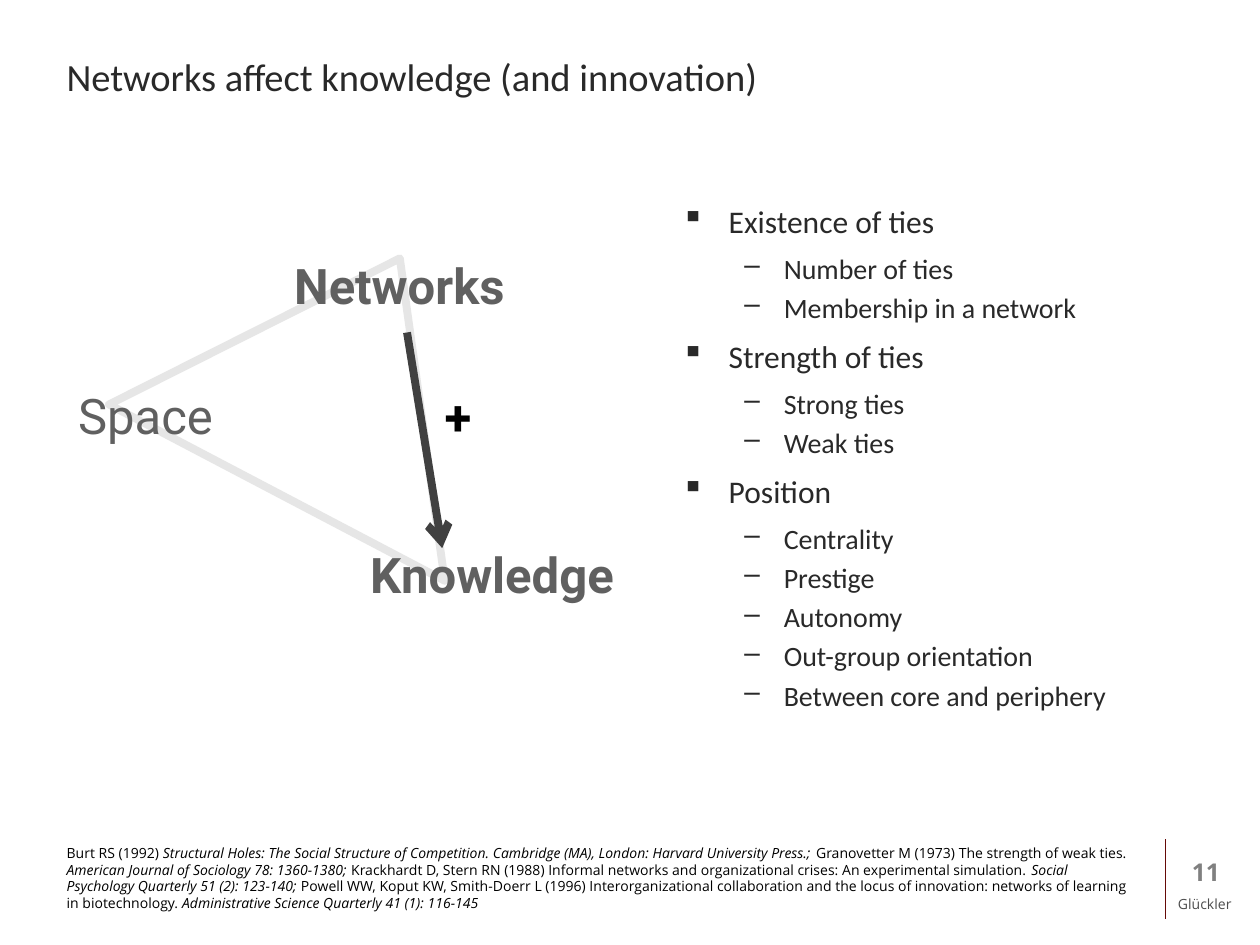
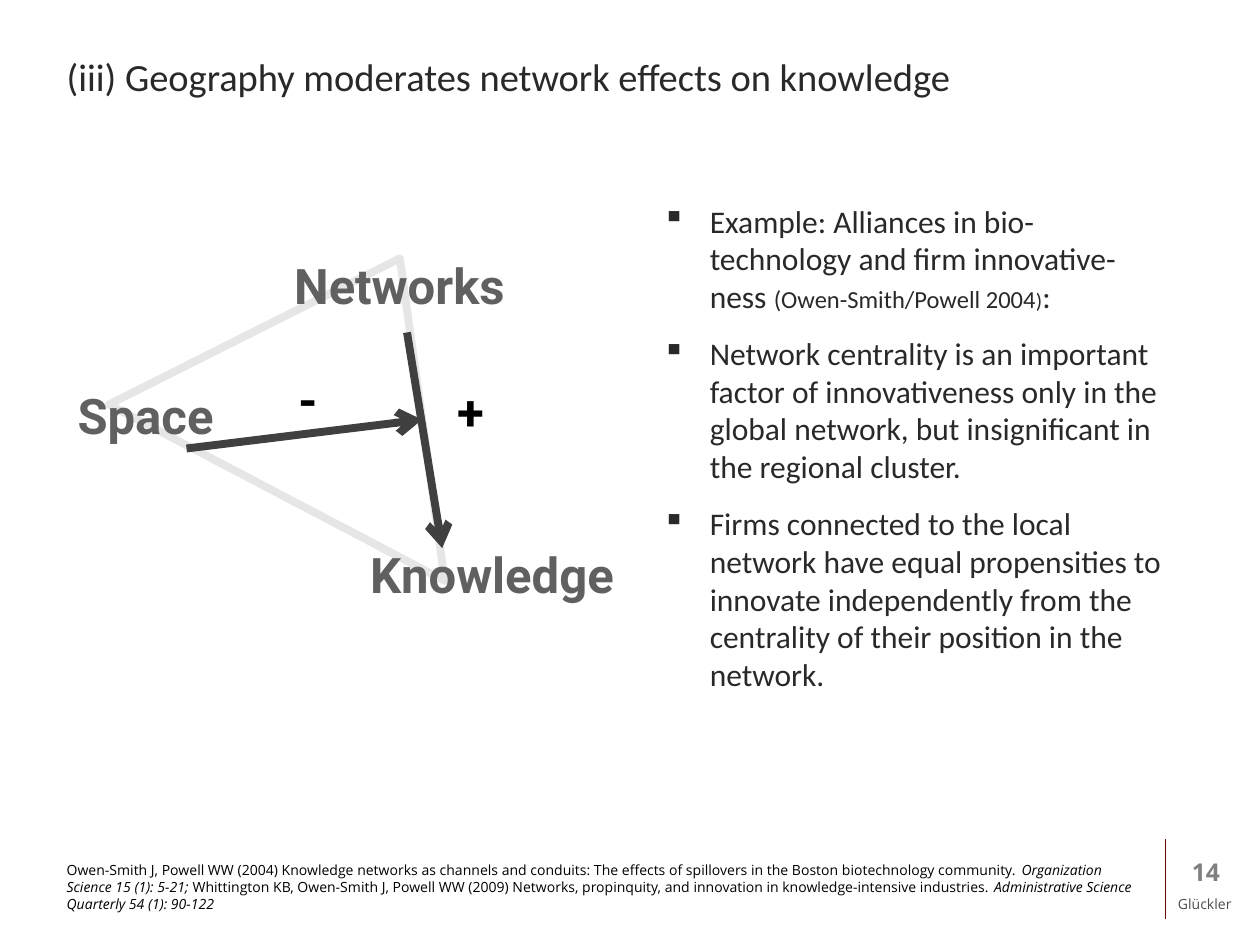
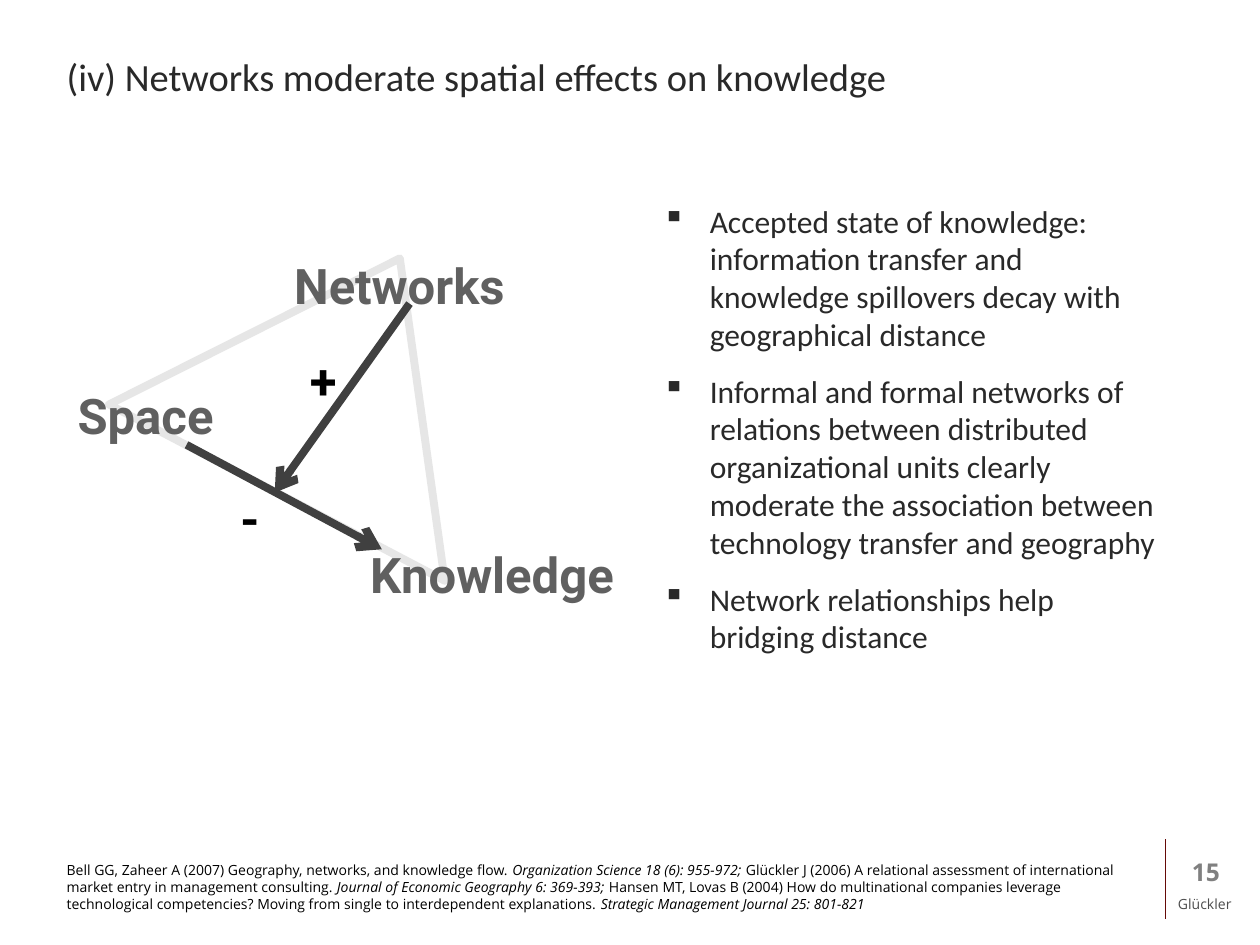
"""Build three slides on how networks, space and knowledge affect each other."""
from pptx import Presentation
from pptx.dml.color import RGBColor
from pptx.enum.shapes import MSO_CONNECTOR as Connector, MSO_SHAPE as Shape
from pptx.enum.text import MSO_ANCHOR as Anchor, PP_ALIGN as Align
from pptx.oxml.ns import qn
from pptx.util import Pt
from lxml.etree import SubElement

INK, BLACK, WHITE = "292929", "000000", "FFFFFF"
GREY, PAGE_GREY, AUTHOR_GREY = "606060", "808080", "4D4D4D"
TRIANGLE_GREY, ARROW_GREY, RULE_RED = "E6E6E6", "404040", "650907"
TITLE_FONT, SMALL_FONT, DIAGRAM_FONT = "Calibri", "Open Sans", "Roboto"

MARGIN = 31
RULE_X = 666
FOOTER_TOP, FOOTER_BOTTOM = 479.5, 525
BODY_RIGHT = 671.8
LEVELS = [
    {"bullet": "▪", "size": 18, "left": 27, "hang": 27, "before": 0.4, "after": 0.2},
    {"bullet": "–", "size": 16, "left": 58.5, "hang": 22.5, "before": 0.2, "after": 0},
]
LABELS = {
    "Knowledge": (174.2, 307.4, 213.8, 41.8),
    "Space": (13.7, 216.7, 139, 41.8),
    "Networks": (128.9, 142.6, 198.7, 41.8),
}
NETWORKS_TO_KNOWLEDGE = (232.6, 190, 252.7, 313.2)

SLIDES = [
    {
        "title": "Networks affect knowledge (and innovation)",
        "page": "11",
        "body_left": 382.3,
        "body": [
            (0, ["Existence of ties"]),
            (1, ["Number of ties"]),
            (1, ["Membership in a network"]),
            (0, ["Strength of ties"]),
            (1, ["Strong ties"]),
            (1, ["Weak ties"]),
            (0, ["Position"]),
            (1, ["Centrality"]),
            (1, ["Prestige"]),
            (1, ["Autonomy"]),
            (1, ["Out-group orientation"]),
            (1, ["Between core and periphery"]),
        ],
        "reference_lines": 4,
        "references": [
            "Burt RS (1992) ",
            "Structural Holes: The Social Structure of Competition. Cambridge (MA), "
            "London: Harvard University Press.; ",
            "Granovetter M (1973) The strength of weak ties. ",
            "American Journal of Sociology 78: 1360-1380; ",
            "Krackhardt D, Stern RN (1988) Informal networks and organizational crises: "
            "An experimental simulation. ",
            "Social Psychology Quarterly 51 (2): 123-140; ",
            "Powell WW, Koput KW, Smith-Doerr L (1996) Interorganizational collaboration "
            "and the locus of innovation: networks of learning in biotechnology. ",
            "Administrative Science Quarterly 41 (1): 116-145",
        ],
        "light_labels": ["Space"],
        "arrows": [NETWORKS_TO_KNOWLEDGE],
        "signs": [("+", 247, 217.4)],
    },
    {
        "title": "(iii) Geography moderates network effects on knowledge",
        "page": "14",
        "body_left": 371.5,
        "body": [
            (0, ["Example: Alliances in bio-technology and firm innovative-ness ",
                 ("(Owen-Smith/Powell 2004", 14), (")", 12), ":"]),
            (0, ["Network centrality is an important factor of innovativeness only in the "
                 "global network, but insignificant in the regional cluster."]),
            (0, ["Firms connected to the local network have equal propensities to innovate "
                 "independently from the centrality of their position in the network."]),
        ],
        "reference_lines": 3,
        "references": [
            "Owen-Smith J, Powell WW (2004) Knowledge networks as channels and conduits: "
            "The effects of spillovers in the Boston biotechnology community. ",
            "Organization Science 15 (1): 5-21; ",
            "Whittington KB, Owen-Smith J, Powell WW (2009) Networks, propinquity, and "
            "innovation in knowledge-intensive industries. ",
            "Administrative Science Quarterly 54 (1): 90-122",
        ],
        "light_labels": [],
        "arrows": [(106.6, 256.3, 241.2, 239.8), NETWORKS_TO_KNOWLEDGE],
        "signs": [("+", 254.2, 214.6), ("-", 163.4, 207.4)],
    },
    {
        "title": "(iv) Networks moderate spatial effects on knowledge",
        "page": "15",
        "body_left": 371.5,
        "body": [
            (0, ["Accepted state of knowledge: information transfer and knowledge "
                 "spillovers decay with geographical distance"]),
            (0, ["Informal and formal networks of relations between distributed "
                 "organizational units clearly moderate the association between "
                 "technology transfer and geography"]),
            (0, ["Network relationships help bridging distance"]),
        ],
        "reference_lines": 3,
        "references": [
            "Bell GG, Zaheer A (2007) Geography, networks, and knowledge flow. ",
            "Organization Science 18 (6): 955-972; ",
            "Glückler J (2006) A relational assessment of international market entry in "
            "management consulting. ",
            "Journal of Economic Geography 6: 369-393; ",
            "Hansen MT, Lovas B (2004) How do multinational companies leverage "
            "technological competencies? Moving from single to interdependent "
            "explanations. ",
            "Strategic Management Journal 25: 801-821",
        ],
        "light_labels": [],
        "arrows": [(106.6, 254.2, 218.2, 313.9), (234, 173.5, 157, 281.5)],
        "signs": [("-", 130.3, 275.8), ("+", 170, 196.6)],
    },
]


def color(hex_code):
    """Turn a hex string into a colour."""
    return RGBColor.from_string(hex_code)


def add_run(paragraph, text, size, font, hex_code, bold=False, italic=False):
    """Append one formatted run to a paragraph."""
    run = paragraph.add_run()
    run.text = text
    run.font.size = Pt(size)
    run.font.name = font
    run.font.color.rgb = color(hex_code)
    run.font.bold = bold
    run.font.italic = italic
    return run


def add_text_box(slide, left, top, width, height, wrap=True):
    """Add an empty text box and return its text frame."""
    box = slide.shapes.add_textbox(Pt(left), Pt(top), Pt(width), Pt(height))
    box.text_frame.word_wrap = wrap
    return box.text_frame


def add_line(slide, start_x, start_y, end_x, end_y, hex_code, width, arrow=False):
    """Draw a straight line, with an arrowhead at its end if asked."""
    line = slide.shapes.add_connector(
        Connector.STRAIGHT, Pt(start_x), Pt(start_y), Pt(end_x), Pt(end_y))
    line.line.color.rgb = color(hex_code)
    line.line.width = Pt(width)
    properties = line._element.spPr
    if arrow:
        SubElement(properties.find(qn("a:ln")), qn("a:tailEnd"), type="arrow")
    SubElement(properties, qn("a:effectLst"))


def add_title(slide, text):
    """Add the slide title on its white band."""
    band = slide.shapes.add_shape(Shape.RECTANGLE, Pt(MARGIN), Pt(9.4), Pt(527), Pt(68.4))
    band.shadow.inherit = False
    band.fill.solid()
    band.fill.fore_color.rgb = color(WHITE)
    band.line.fill.background()
    band.text_frame.word_wrap = True
    band.text_frame.vertical_anchor = Anchor.MIDDLE
    paragraph = band.text_frame.paragraphs[0]
    paragraph.alignment = Align.LEFT
    add_run(paragraph, text, 22, TITLE_FONT, INK)


def add_footer(slide, page):
    """Add the red rule, the author and the page number."""
    add_line(slide, RULE_X, FOOTER_TOP, RULE_X, FOOTER_BOTTOM, RULE_RED, 1)
    author = add_text_box(slide, RULE_X, 508.3, 46.8, 17.3, wrap=False)
    add_run(author.paragraphs[0], "Glückler", 8, SMALL_FONT, AUTHOR_GREY)
    number = add_text_box(slide, 660.2, 486, 44, 23.8).paragraphs[0]
    number.alignment = Align.RIGHT
    add_run(number, page, 14, SMALL_FONT, PAGE_GREY, bold=True)


def add_references(slide, parts, line_count):
    """Add the sources above the bottom edge, every second part in italics."""
    height = 10 * line_count + 6
    frame = add_text_box(slide, MARGIN, FOOTER_BOTTOM - height, 623.5, height)
    for index, part in enumerate(parts):
        add_run(frame.paragraphs[0], part, 8, SMALL_FONT, BLACK, italic=index % 2 == 1)


def add_bullets(slide, left, items):
    """Add the two-level bullet list; a run is text or a text and size pair."""
    frame = add_text_box(slide, left, 111.6, BODY_RIGHT - left, 351.4)
    for index, (depth, runs) in enumerate(items):
        level = LEVELS[depth]
        paragraph = frame.add_paragraph() if index else frame.paragraphs[0]
        paragraph.level = depth
        properties = paragraph._p.get_or_add_pPr()
        properties.set("marL", str(Pt(level["left"])))
        properties.set("indent", str(-Pt(level["hang"])))
        SubElement(properties, qn("a:buChar"), char=level["bullet"])
        if index:
            paragraph.space_before = Pt(level["before"] * level["size"])
        paragraph.space_after = Pt(level["after"] * level["size"])
        for run in runs:
            text, size = (run, level["size"]) if isinstance(run, str) else run
            add_run(paragraph, text, size, TITLE_FONT, INK)


def add_label(slide, text, bounds, bold):
    """Add a corner label whose letters have a white outline."""
    paragraph = add_text_box(slide, *bounds).paragraphs[0]
    paragraph.alignment = Align.CENTER
    run = add_run(paragraph, text, 28, DIAGRAM_FONT, GREY, bold=bold)
    properties = run._r.get_or_add_rPr()
    outline = SubElement(properties, qn("a:ln"), w=str(Pt(0.75)))
    SubElement(SubElement(outline, qn("a:solidFill")), qn("a:srgbClr"), val=WHITE)
    properties.insert(0, outline)


def add_sign(slide, sign, left, top):
    """Add a plus or minus beside an arrow."""
    frame = add_text_box(slide, left, top, 31 if sign == "+" else 24, 41, wrap=False)
    add_run(frame.paragraphs[0], sign, 28, DIAGRAM_FONT, BLACK, bold=True)


def add_diagram(slide, light_labels, arrows, signs):
    """Draw the tilted triangle with its labels, arrows and signs."""
    triangle = slide.shapes.add_shape(
        Shape.ISOSCELES_TRIANGLE, Pt(85), Pt(139), Pt(216.7), Pt(151.2))
    triangle.rotation = 27.7
    triangle.shadow.inherit = False
    triangle.fill.background()
    triangle.line.color.rgb = color(TRIANGLE_GREY)
    triangle.line.width = Pt(4.5)
    for text, bounds in LABELS.items():
        add_label(slide, text, bounds, bold=text not in light_labels)
    for arrow in arrows:
        add_line(slide, *arrow, ARROW_GREY, 4.5, arrow=True)
    for sign in signs:
        add_sign(slide, *sign)


def main():
    """Build and save the presentation."""
    presentation = Presentation()
    presentation.slide_width, presentation.slide_height = Pt(720), Pt(540)
    for content in SLIDES:
        slide = presentation.slides.add_slide(presentation.slide_layouts[6])
        add_footer(slide, content["page"])
        add_title(slide, content["title"])
        add_bullets(slide, content["body_left"], content["body"])
        add_references(slide, content["references"], content["reference_lines"])
        add_diagram(slide, content["light_labels"], content["arrows"], content["signs"])
    presentation.save("out.pptx")


if __name__ == "__main__":
    main()
